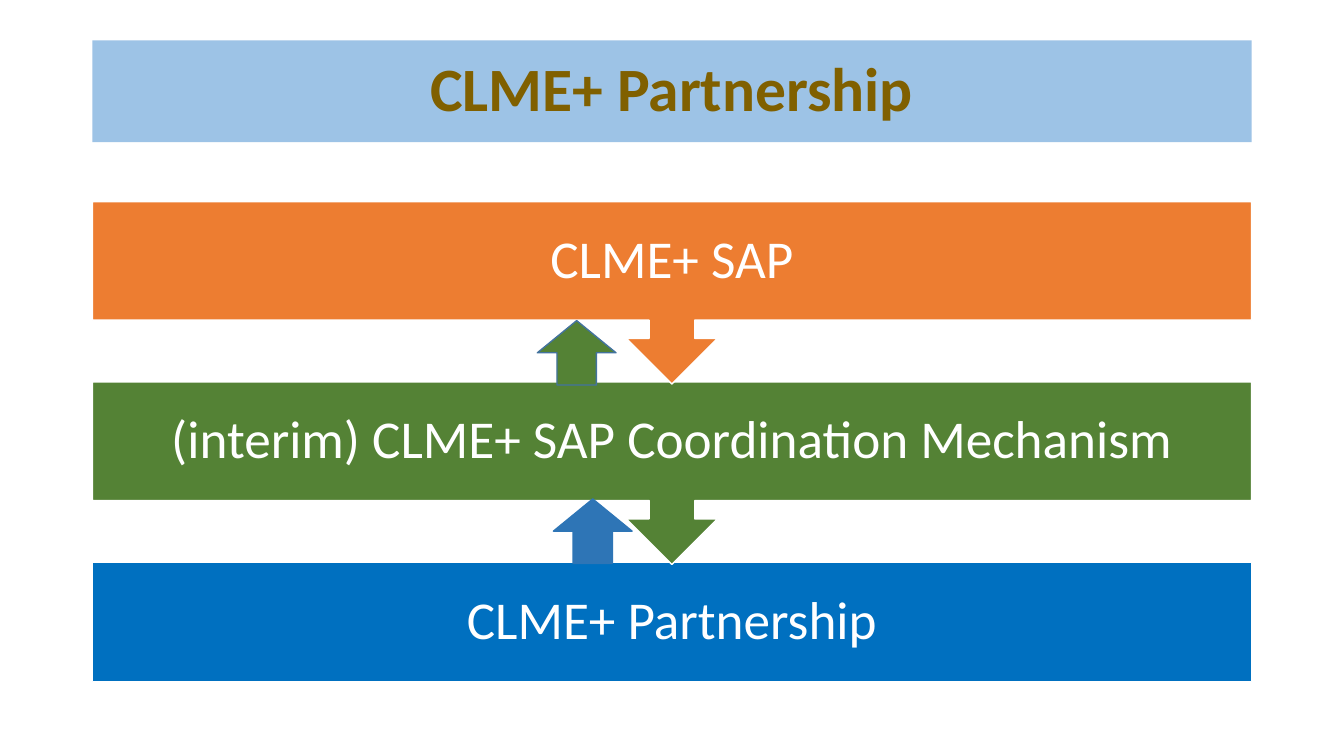
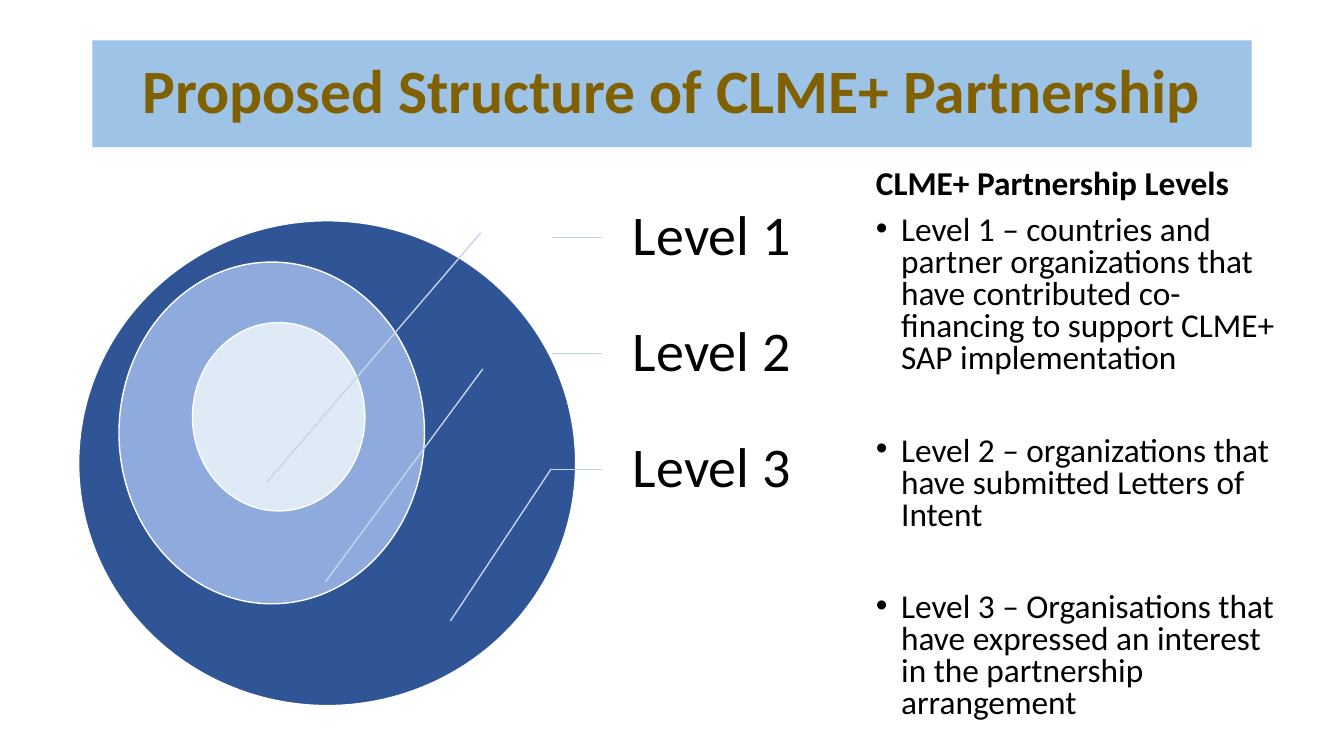
from dataclasses import dataclass
from typing import Any

from lxml import etree
from pptx import Presentation
from pptx.dml.color import RGBColor
from pptx.enum.shapes import MSO_CONNECTOR, MSO_SHAPE
from pptx.enum.text import MSO_ANCHOR, MSO_AUTO_SIZE, PP_ALIGN
from pptx.oxml.ns import qn
from pptx.util import Pt

RECTANGLE, ELLIPSE = MSO_SHAPE.RECTANGLE, MSO_SHAPE.OVAL
CALLOUT, UP_ARROW = MSO_SHAPE.DOWN_ARROW_CALLOUT, MSO_SHAPE.UP_ARROW
STRAIGHT = MSO_CONNECTOR.STRAIGHT
MIDDLE, TOP = MSO_ANCHOR.MIDDLE, MSO_ANCHOR.TOP
LEFT, CENTER = PP_ALIGN.LEFT, PP_ALIGN.CENTER
FIXED = MSO_AUTO_SIZE.NONE
LEFT_SIDE = 1
TITLE_ONLY, TITLE_AND_BODY = 5, 1


@dataclass(frozen=True)
class Theme:
    font: str = "Calibri"
    title_size: float = 44
    band_size: float = 38
    label_size: float = 40
    body_size: float = 23.8
    title_fill: str = "9DC3E6"
    title_text: str = "806000"
    white: str = "FFFFFF"
    black: str = "000000"
    orange: str = "ED7D31"
    green: str = "548235"
    blue: str = "0070C0"
    arrow_blue: str = "2E75B6"
    arrow_edge: str = "43739E"
    outer: str = "2F5597"
    middle: str = "8FAADC"
    inner: str = "DEEBF7"
    leader: str = "C4D5EB"


THEME = Theme()
MARGIN, CONTENT_WIDTH = 66, 828


@dataclass(frozen=True)
class Box:
    left: float
    top: float
    width: float
    height: float

    def lengths(self) -> tuple:
        return Pt(self.left), Pt(self.top), Pt(self.width), Pt(self.height)


@dataclass(frozen=True)
class Figure:
    preset: Any
    box: Box
    fill: str
    edge: str = THEME.white
    text: str = ""


@dataclass(frozen=True)
class Level:
    label: str
    pointer_start: tuple
    pointer_end: tuple
    meaning: str


# Shared formatting
def assign(target: Any, values: dict) -> None:
    for name, value in values.items():
        setattr(target, name, value)


def place(shape: Any, box: Box) -> None:
    assign(shape, dict(zip(("left", "top", "width", "height"), box.lengths())))


def set_frame(frame: Any, anchor: Any, side: float, vertical: float, right: float) -> None:
    assign(frame, {
        "word_wrap": True, "auto_size": FIXED, "vertical_anchor": anchor,
        "margin_left": Pt(side), "margin_right": Pt(right),
        "margin_top": Pt(vertical), "margin_bottom": Pt(vertical),
    })


def write(paragraph: Any, text: str, size: float, color: str, align: Any = LEFT,
          bold: bool = False, spacing: float = 0.9, before: float = 0) -> None:
    paragraph.text = text
    assign(paragraph, {"alignment": align, "line_spacing": spacing,
                       "space_before": Pt(before)})
    font = paragraph.runs[0].font
    assign(font, {"name": THEME.font, "size": Pt(size), "bold": bold})
    font.color.rgb = RGBColor.from_string(color)


def add_titled_slide(deck: Any, layout: int, title: str, height: float) -> Any:
    slide = deck.slides.add_slide(deck.slide_layouts[layout])
    band = slide.shapes.title
    place(band, Box(MARGIN, 28.8, CONTENT_WIDTH, height))
    band.fill.solid()
    band.fill.fore_color.rgb = RGBColor.from_string(THEME.title_fill)
    set_frame(band.text_frame, MIDDLE, 7.2, 3.6, 7.2)
    write(band.text_frame.paragraphs[0], title, THEME.title_size,
          THEME.title_text, CENTER, bold=True)
    return slide


def draw_figure(slide: Any, figure: Figure) -> None:
    shape = slide.shapes.add_shape(figure.preset, *figure.box.lengths())
    shape.shadow.inherit = False
    shape.fill.solid()
    shape.fill.fore_color.rgb = RGBColor.from_string(figure.fill)
    shape.line.color.rgb = RGBColor.from_string(figure.edge)
    shape.line.width = Pt(1)
    if figure.text:
        set_frame(shape.text_frame, MIDDLE, 21.6, 21.6, 21.6)
        write(shape.text_frame.paragraphs[0], figure.text, THEME.band_size,
              THEME.white, CENTER)


def draw_leader(slide: Any, start: tuple, end: tuple) -> Any:
    leader = slide.shapes.add_connector(STRAIGHT, *map(Pt, start + end))
    leader.line.color.rgb = RGBColor.from_string(THEME.leader)
    leader.line.width = Pt(1)
    etree.SubElement(leader._element.spPr, qn("a:effectLst"))
    return leader


# Slide 1: bands linked by arrows
BAND_TOP, BAND_PITCH, BAND_HEIGHT, CALLOUT_HEIGHT = 144, 128.9, 85, 130.3
BANDS = (
    ("CLME+ SAP", THEME.orange, CALLOUT, CALLOUT_HEIGHT),
    ("(interim) CLME+ SAP Coordination Mechanism", THEME.green, CALLOUT, CALLOUT_HEIGHT),
    ("CLME+ Partnership", THEME.blue, RECTANGLE, BAND_HEIGHT),
)
RETURN_ARROWS = (
    Figure(UP_ARROW, Box(383.8, 229, 56.2, 46), THEME.green, THEME.arrow_edge),
    Figure(UP_ARROW, Box(395.3, 356.4, 56.2, 46), THEME.arrow_blue, THEME.arrow_blue),
)


def build_mechanism(deck: Any) -> None:
    slide = add_titled_slide(deck, TITLE_ONLY, "CLME+ Partnership", 72.7)
    # Lowest band first, so each arrow tip lies over the band below it
    for row, (text, fill, preset, height) in reversed(list(enumerate(BANDS))):
        box = Box(MARGIN, BAND_TOP + row * BAND_PITCH, CONTENT_WIDTH, height)
        draw_figure(slide, Figure(preset, box, fill, text=text))
    for arrow in RETURN_ARROWS:
        draw_figure(slide, arrow)


# Slide 2: nested levels and their meaning
RINGS = (
    Figure(ELLIPSE, Box(56.2, 157.7, 355, 346.3), THEME.outer),
    Figure(ELLIPSE, Box(85, 187.2, 218.2, 244.1), THEME.middle),
    Figure(ELLIPSE, Box(137.5, 230.4, 123.1, 134.6), THEME.inner),
)
LEVELS = (
    Level("Level 1", (343.4, 166.3), (190.8, 344.2),
          "countries and partner organizations that have contributed "
          "co-financing to support CLME+ SAP implementation"),
    Level("Level 2", (344.9, 263.5), (232.6, 415.4),
          "organizations that have submitted Letters of Intent"),
    Level("Level 3", (393.8, 334.8), (321.8, 443.5),
          "Organisations that have expressed an interest in the "
          "partnership arrangement"),
)
LABEL_LEFT, LABEL_TOP, LABEL_WIDTH, LABEL_HEIGHT = 429.8, 128.2, 142, 82.8
TICK_START = 394.4


def draw_level(slide: Any, row: int, level: Level) -> None:
    top = LABEL_TOP + row * LABEL_HEIGHT
    box = Box(LABEL_LEFT, top, LABEL_WIDTH, LABEL_HEIGHT)
    label = slide.shapes.add_textbox(*box.lengths())
    set_frame(label.text_frame, MIDDLE, 22.3, 4.3, 4.3)
    write(label.text_frame.paragraphs[0], level.label, THEME.label_size, THEME.black)
    center = top + LABEL_HEIGHT / 2
    tick = draw_leader(slide, (TICK_START, center), (LABEL_LEFT, center))
    tick.end_connect(label, LEFT_SIDE)
    draw_leader(slide, level.pointer_start, level.pointer_end)


def fill_meanings(body: Any) -> None:
    place(body, Box(618.5, 118.1, 305.3, 403.9))
    frame = body.text_frame
    set_frame(frame, TOP, 7.2, 3.6, 7.2)
    heading = frame.paragraphs[0]
    write(heading, "CLME+ Partnership Levels", THEME.body_size, THEME.black,
          bold=True, spacing=0.8, before=10)
    heading_format = heading._p.get_or_add_pPr()
    heading_format.set("marL", "0")
    heading_format.set("indent", "0")
    etree.SubElement(heading_format, qn("a:buNone"))
    for row, level in enumerate(LEVELS):
        item = frame.add_paragraph()
        write(item, f"{level.label} – {level.meaning}", THEME.body_size,
              THEME.black, spacing=0.8, before=43 if row else 10)
        item_format = item._p.get_or_add_pPr()
        item_format.set("marL", str(Pt(18)))
        item_format.set("indent", str(-Pt(18)))


def build_structure(deck: Any) -> None:
    slide = add_titled_slide(deck, TITLE_AND_BODY,
                             "Proposed Structure of CLME+ Partnership", 76.3)
    for ring in RINGS:
        draw_figure(slide, ring)
    for row, level in enumerate(LEVELS):
        draw_level(slide, row, level)
    fill_meanings(slide.placeholders[1])


def main() -> None:
    deck = Presentation()
    assign(deck, {"slide_width": Pt(960), "slide_height": Pt(540)})
    build_mechanism(deck)
    build_structure(deck)
    deck.save("out.pptx")


if __name__ == "__main__":
    main()
